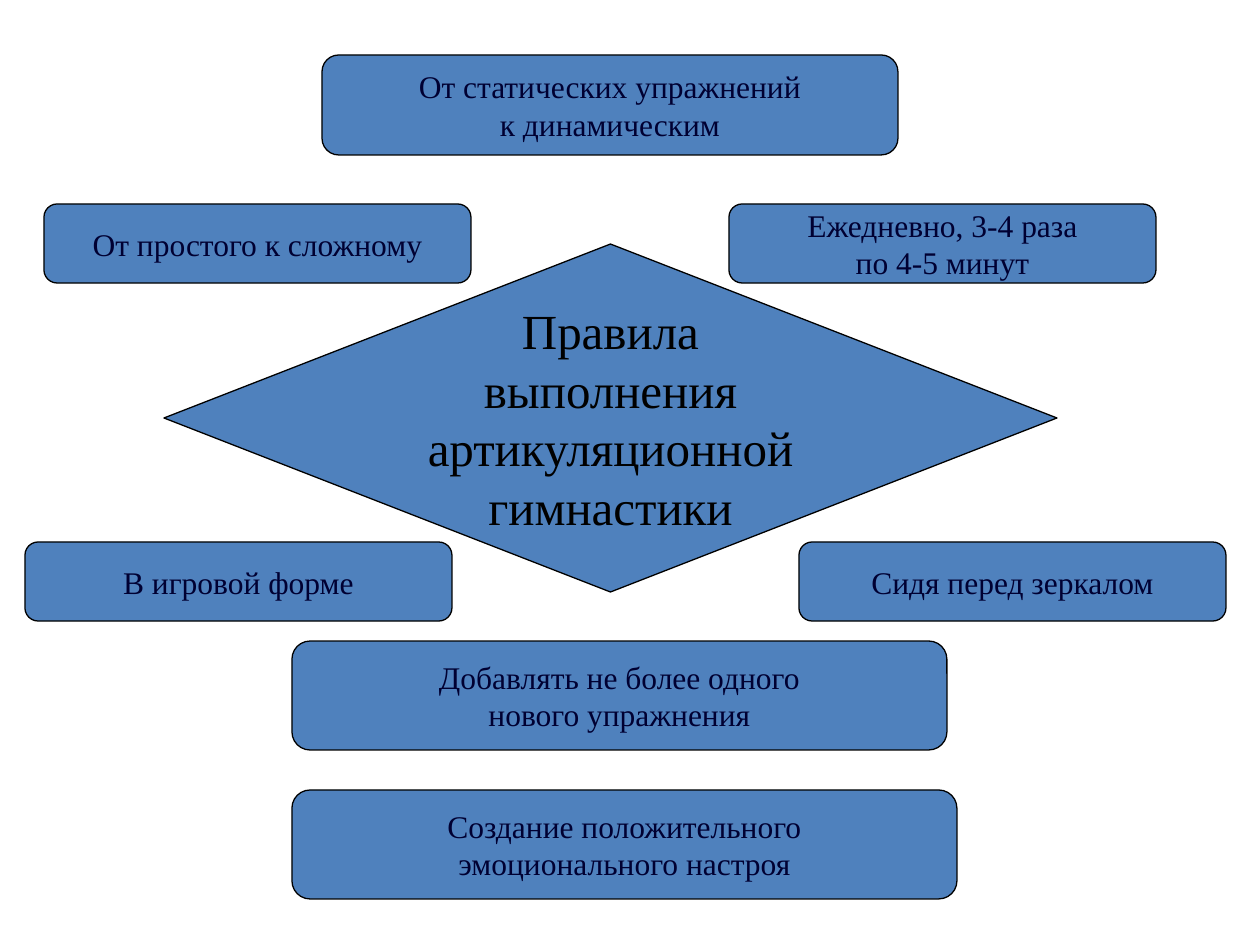
from pptx import Presentation
from pptx.dml.color import RGBColor
from pptx.enum.shapes import MSO_SHAPE
from pptx.enum.text import MSO_ANCHOR, PP_ALIGN
from pptx.util import Pt

ROUNDED = MSO_SHAPE.ROUNDED_RECTANGLE
DECISION = MSO_SHAPE.FLOWCHART_DECISION
MIDDLE = MSO_ANCHOR.MIDDLE
CENTER = PP_ALIGN.CENTER

EMU_PER_PX = 914400 / 126
FONT = "Times New Roman"
FILL, LINE = "4F81BD", "000000"
TITLE_COLOR, RULE_COLOR = "000000", "000032"

TITLE = ["Правила", "выполнения", "артикуляционной", "гимнастики"]
SMALL_W, SMALL_H = 427, 79
UPPER_Y, LOWER_Y = 204, 542
RULES = [
    ((322, 55, 576, 100), ["От статических упражнений", "к динамическим"]),
    ((44, UPPER_Y, SMALL_W, SMALL_H), ["От простого к сложному"]),
    ((729, UPPER_Y, SMALL_W, SMALL_H), ["Ежедневно, 3-4 раза", "по 4-5 минут"]),
    ((25, LOWER_Y, SMALL_W, SMALL_H), ["В игровой форме"]),
    ((799, LOWER_Y, SMALL_W, SMALL_H), ["Сидя перед зеркалом"]),
    ((292, 641, 655, 109), ["Добавлять не более одного", "нового упражнения"]),
    ((292, 790, 665, 109), ["Создание положительного", "эмоционального настроя"]),
]


def px(n):
    return round(n * EMU_PER_PX)


def color(value):
    return RGBColor.from_string(value)


def add_block(s, kind, box, lines, size, text_color):
    sp = s.shapes.add_shape(kind, *map(px, box))
    sp.shadow.inherit = False
    sp.fill.solid()
    sp.fill.fore_color.rgb = color(FILL)
    sp.line.color.rgb = color(LINE)
    sp.line.width = Pt(0.75)
    tf = sp.text_frame
    tf.word_wrap = False
    tf.vertical_anchor = MIDDLE
    for i, line in enumerate(lines):
        p = tf.add_paragraph() if i else tf.paragraphs[0]
        p.text = line
        p.alignment = CENTER
        p.font.name = FONT
        p.font.size = Pt(size)
        p.font.color.rgb = color(text_color)


def add_title(s, box):
    add_block(s, DECISION, box, TITLE, 28, TITLE_COLOR)


def add_rule(s, box, lines):
    add_block(s, ROUNDED, box, lines, 18, RULE_COLOR)


def main():
    prs = Presentation()
    prs.slide_width, prs.slide_height = px(1260), px(945)
    s = prs.slides.add_slide(prs.slide_layouts[6])
    add_title(s, (164, 244, 893, 348))
    for box, lines in RULES:
        add_rule(s, box, lines)
    prs.save("out.pptx")


if __name__ == "__main__":
    main()
